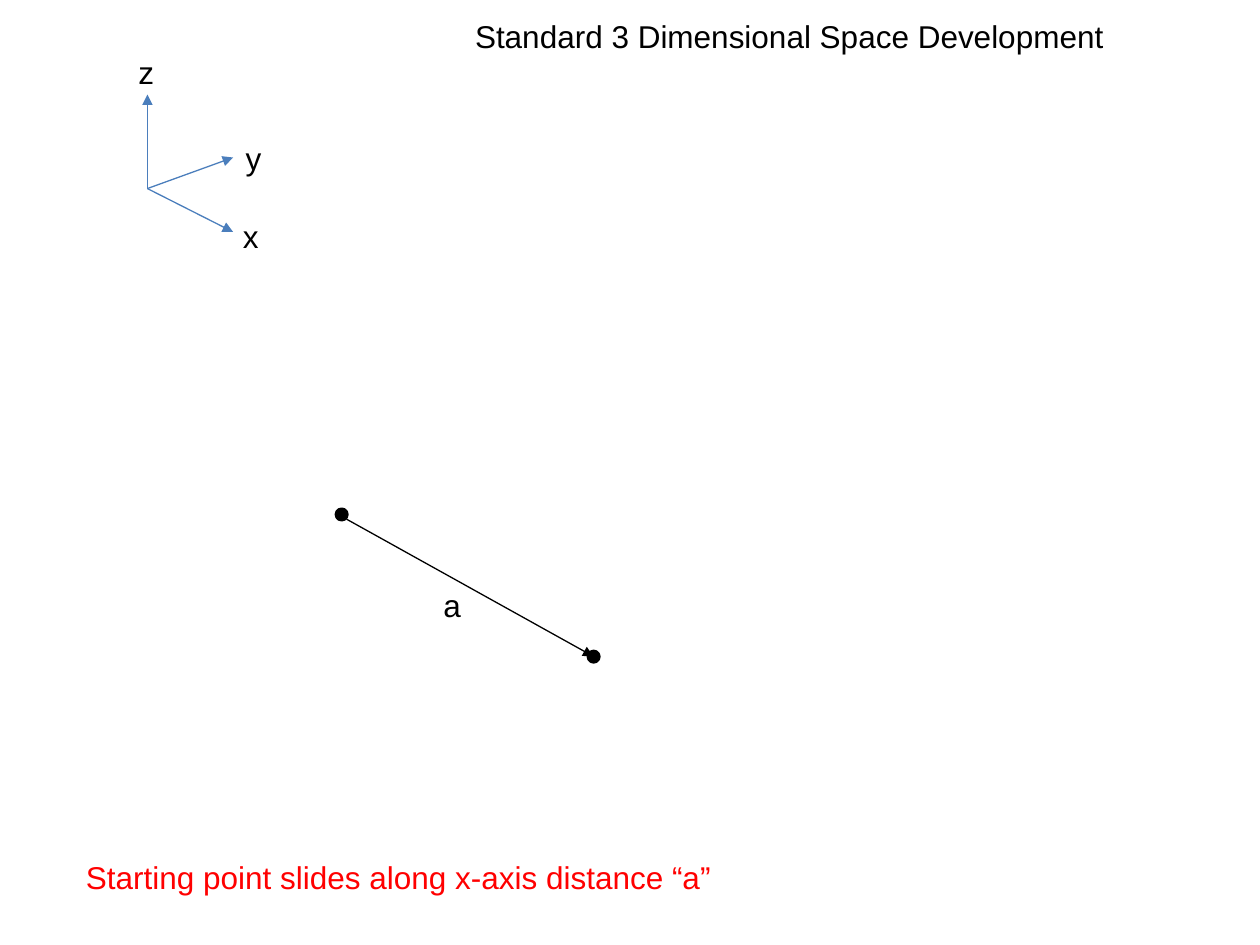
from lxml.etree import SubElement
from pptx import Presentation
from pptx.dml.color import RGBColor
from pptx.enum.shapes import MSO_CONNECTOR, MSO_SHAPE
from pptx.enum.text import MSO_ANCHOR, MSO_AUTO_SIZE, PP_ALIGN
from pptx.oxml.ns import qn
from pptx.util import Pt

COLORS = {"ink": "000000", "axis": "4B7EBC", "caption": "FF0000"}
FRAME_FORMAT = {
    "word_wrap": True,
    "auto_size": MSO_AUTO_SIZE.NONE,
    "vertical_anchor": MSO_ANCHOR.TOP,
}
FONT_FORMAT = {"name": "Arial", "size": Pt(18), "bold": False}
LABEL_WIDTH, SENTENCE_WIDTH, LINE_HEIGHT = 18, 450, 29
DOT_SIZE = 6

AXIS_ORIGIN = (84.24, 107.75)
AXIS_TIPS = [(133.2, 132.5), (133.2, 90), (84.24, 54)]
LABELS = [
    ("x", 131.75, 120.25),
    ("y", 133.2, 75.6),
    ("z", 72, 26.5),
    ("a", 246.25, 331.25),
]
START_DOT = (192.25, 291)
END_DOT = (336.25, 372.25)
SLIDE_VECTOR = ((198, 296.65), (339.1, 375.1))


def color(name):
    return RGBColor.from_string(COLORS[name])


def apply(target, values):
    for attribute, value in values.items():
        setattr(target, attribute, value)


def write(holder, words, left, top, width, color_name="ink"):
    apply(holder, {
        "left": Pt(left),
        "top": Pt(top),
        "width": Pt(width),
        "height": Pt(LINE_HEIGHT),
    })
    frame = holder.text_frame
    frame.text = words
    apply(frame, FRAME_FORMAT)
    sentence = frame.paragraphs[0]
    sentence.alignment = PP_ALIGN.LEFT
    font = sentence.runs[0].font
    apply(font, FONT_FORMAT)
    font.color.rgb = color(color_name)


def add_label(slide, words, left, top, width=LABEL_WIDTH, color_name="ink"):
    label = slide.shapes.add_textbox(0, 0, 0, 0)
    write(label, words, left, top, width, color_name)


def add_arrow(slide, start, tip, color_name):
    arrow = slide.shapes.add_connector(
        MSO_CONNECTOR.STRAIGHT, *(Pt(value) for value in (*start, *tip))
    )
    arrow.line.width = Pt(0.75)
    arrow.line.color.rgb = color(color_name)
    properties = arrow._element.spPr
    SubElement(properties.find(qn("a:ln")), qn("a:tailEnd"), type="triangle")
    SubElement(properties, qn("a:effectLst"))


def add_dot(slide, left, top):
    dot = slide.shapes.add_shape(
        MSO_SHAPE.OVAL, Pt(left), Pt(top), Pt(DOT_SIZE), Pt(DOT_SIZE)
    )
    dot.shadow.inherit = False
    dot.fill.solid()
    dot.fill.fore_color.rgb = color("ink")
    dot.line.color.rgb = color("ink")
    dot.line.width = Pt(2)


def main():
    deck = Presentation()
    apply(deck, {"slide_width": Pt(720), "slide_height": Pt(540)})
    slide = deck.slides.add_slide(deck.slide_layouts[5])

    write(slide.shapes.title, "Standard 3 Dimensional Space Development",
          264.25, 6, SENTENCE_WIDTH)
    for tip in AXIS_TIPS:
        add_arrow(slide, AXIS_ORIGIN, tip, "axis")
    add_dot(slide, *START_DOT)
    add_arrow(slide, *SLIDE_VECTOR, "ink")
    add_dot(slide, *END_DOT)
    for words, left, top in LABELS:
        add_label(slide, words, left, top)
    add_label(slide, "Starting point slides along x-axis distance “a”",
              42, 486.75, SENTENCE_WIDTH, "caption")

    deck.save("out.pptx")


if __name__ == "__main__":
    main()
